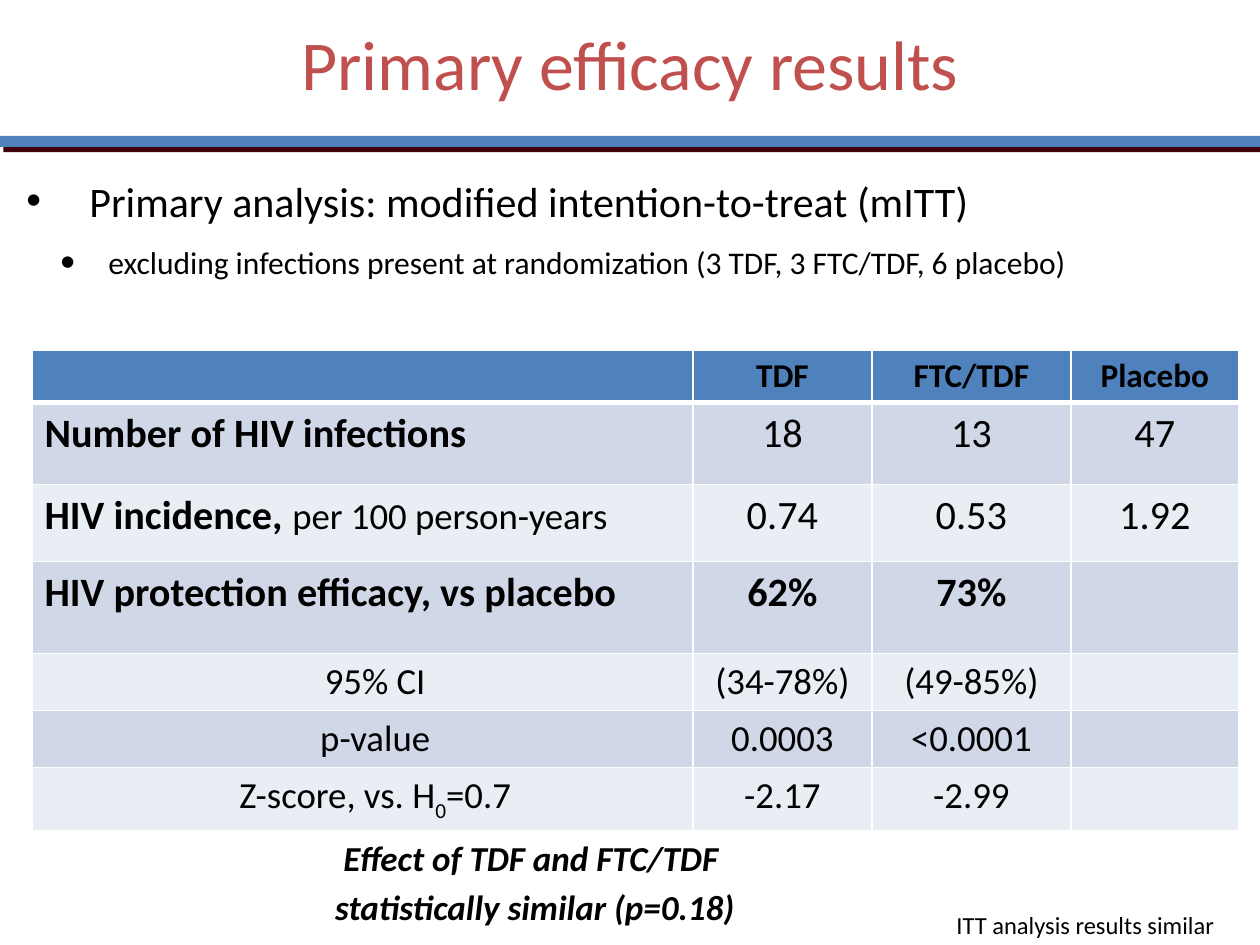
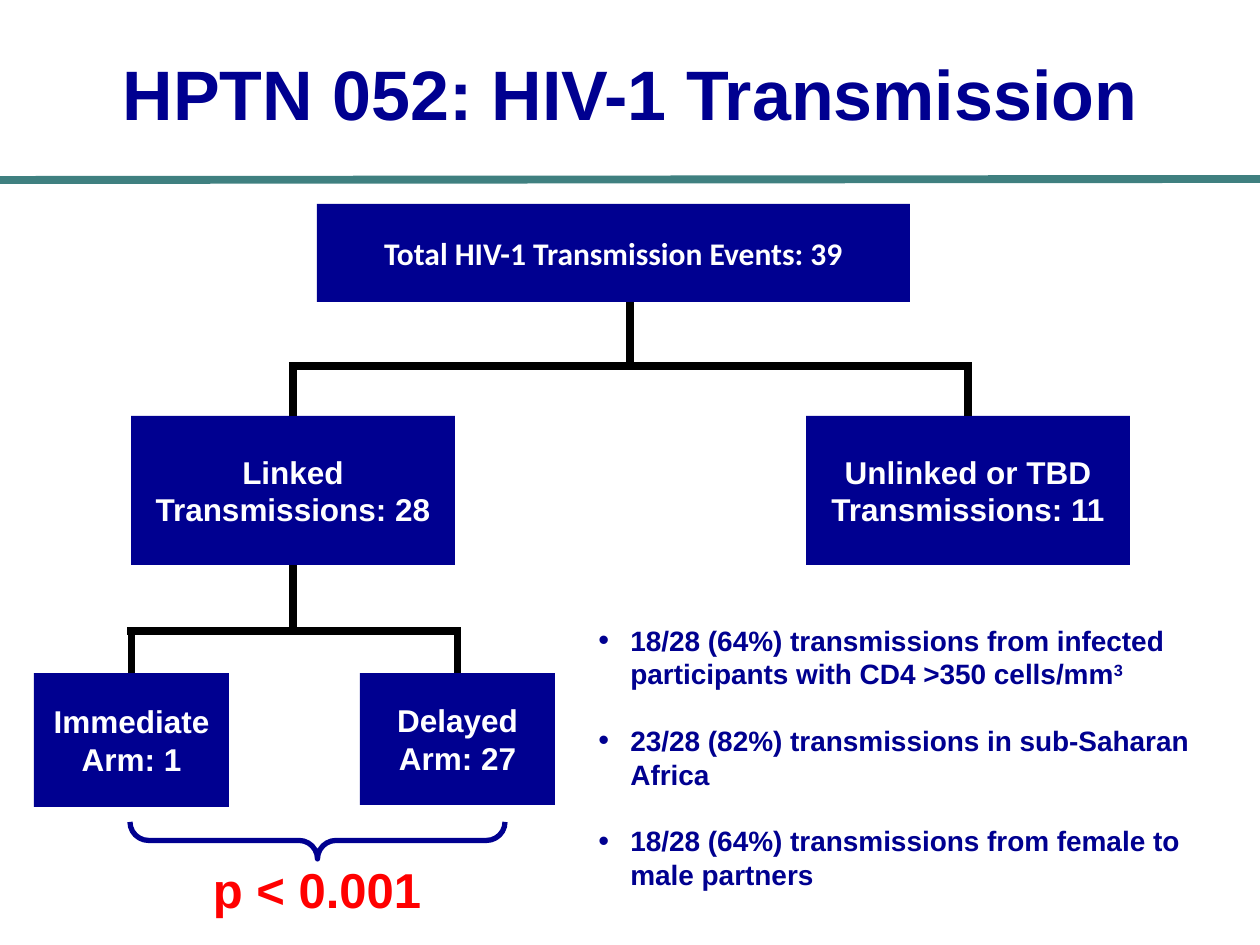
from lxml.etree import SubElement
from pptx import Presentation
from pptx.dml.color import RGBColor
from pptx.enum.shapes import MSO_CONNECTOR, MSO_SHAPE
from pptx.enum.text import MSO_ANCHOR, PP_ALIGN
from pptx.oxml.ns import qn
from pptx.util import Emu, Pt

EMU_PER_PX = 914400 / 126
BLACK, WHITE, RED = "000000", "FFFFFF", "FF0000"
BLUE, BRICK, NAVY, TEAL = "4F81BD", "C0504D", "000090", "3F8080"
BAND_SHADOW = "3F000B"
ROW_FILLS = ("D0D8E8", "E9EDF4")
TITLE_SIZE = 40

COLUMN_WIDTHS = (661, 179, 199, 168)
ROW_HEIGHTS = (52, 82, 77, 92, 57, 57, 60)
BOLD = {"bold": True}
SMALL = {"size": 21}
RESULTS = [
    ([("", {})], ("TDF", "FTC/TDF", "Placebo"), {"size": 19, "bold": True}),
    ([("Number of HIV infections", BOLD)], ("18", "13", "47"), {}),
    ([("HIV incidence, ", BOLD), ("per 100 person-years", SMALL)],
     ("0.74", "0.53", "1.92"), {}),
    ([("HIV protection efficacy, vs placebo", BOLD)], ("62%", "73%", ""), BOLD),
    ([("95% CI", SMALL)], ("(34-78%)", "(49-85%)", ""), SMALL),
    ([("p-value", SMALL)], ("0.0003", "<0.0001", ""), SMALL),
    ([("Z-score, vs. H", SMALL), ("0", {"size": 21, "baseline": -25}), ("=0.7", SMALL)],
     ("-2.17", "-2.99", ""), SMALL),
]
FIRST_STATISTIC_ROW = 4


def px(length):
    """Turn px into EMU."""
    return Emu(round(length * EMU_PER_PX))


def rgb(color):
    """Turn a hex string into a colour."""
    return RGBColor.from_string(color)


def format_run(run, size=23, font="Calibri", color=BLACK, bold=False, italic=False,
               baseline=0):
    """Set the look of one run."""
    run.font.size = Pt(size)
    run.font.name = font
    run.font.color.rgb = rgb(color)
    run.font.bold = bold
    run.font.italic = italic
    if baseline:
        run._r.get_or_add_rPr().set("baseline", str(baseline * 1000))


def write(paragraph, pieces, align=PP_ALIGN.LEFT, **style):
    """Fill a paragraph with (text, style) pieces over a common style."""
    paragraph.alignment = align
    for text, changes in pieces:
        run = paragraph.add_run()
        run.text = text
        format_run(run, **{**style, **changes})


def fill_frame(frame, paragraphs, gap=0, anchor=MSO_ANCHOR.MIDDLE, **style):
    """Write paragraphs, each a list of pieces, into a text frame."""
    frame.word_wrap = True
    frame.vertical_anchor = anchor
    for index, pieces in enumerate(paragraphs):
        paragraph = frame.add_paragraph() if index else frame.paragraphs[0]
        paragraph.space_after = Pt(gap if index < len(paragraphs) - 1 else 0)
        write(paragraph, pieces, **style)


def add_text(slide, bounds, paragraphs, **options):
    """Add a wrapping text box and return its paragraphs."""
    frame = slide.shapes.add_textbox(*map(px, bounds)).text_frame
    fill_frame(frame, paragraphs, **options)
    return frame.paragraphs


def add_title(slide, bounds, text, **style):
    """Add the centred slide title."""
    add_text(slide, bounds, [[(text, {})]], align=PP_ALIGN.CENTER, size=TITLE_SIZE, **style)


def set_bullet(paragraph, margin, hanging, percent=100):
    """Give a paragraph a hanging round bullet."""
    properties = paragraph._p.get_or_add_pPr()
    properties.set("marL", str(px(margin)))
    properties.set("indent", str(-px(hanging)))
    SubElement(properties, qn("a:buSzPct"), val=str(percent * 1000))
    SubElement(properties, qn("a:buFont"), typeface="Arial")
    SubElement(properties, qn("a:buChar"), char="•")


def add_rectangle(slide, bounds, color):
    """Add a plain filled rectangle."""
    shape = slide.shapes.add_shape(MSO_SHAPE.RECTANGLE, *map(px, bounds))
    shape.shadow.inherit = False
    shape.fill.solid()
    shape.fill.fore_color.rgb = rgb(color)
    shape.line.fill.background()
    return shape


def add_box(slide, bounds, text, font="Arial"):
    """Add a navy box with a bold white label."""
    shape = add_rectangle(slide, bounds, NAVY)
    fill_frame(shape.text_frame, [[(text, {})]], align=PP_ALIGN.CENTER,
               size=18, font=font, color=WHITE, bold=True)
    return shape


def add_band(slide):
    """Add the title band with its hard offset shadow."""
    band = add_rectangle(slide, (0, 136, 1260, 11), BLUE)
    effects = band._element.spPr.find(qn("a:effectLst"))
    shadow = SubElement(effects, qn("a:outerShdw"), dist=str(Pt(3.6)),
                        dir=str(56 * 60000), algn="ctr", rotWithShape="0")
    SubElement(shadow, qn("a:srgbClr"), val=BAND_SHADOW)


def add_line(slide, start, end, color=BLACK):
    """Add a thick straight connector between two points in EMU."""
    line = slide.shapes.add_connector(MSO_CONNECTOR.STRAIGHT, *start, *end)
    line.line.color.rgb = rgb(color)
    line.line.width = Pt(4.5)
    SubElement(line._element.spPr, qn("a:effectLst"))
    return line


def middle(shape):
    """Return the horizontal middle of a shape."""
    return Emu(shape.left + shape.width // 2)


def add_branches(slide, stem_x, stem_top, bar_y, children):
    """Join a stem through a bar to the top of each child box; return the stem."""
    stem = add_line(slide, (stem_x, stem_top), (stem_x, bar_y))
    overhang = px(4)
    add_line(slide, (middle(children[0]) - overhang, bar_y),
             (middle(children[-1]) + overhang, bar_y))
    for child in children:
        drop = add_line(slide, (middle(child), bar_y), (middle(child), child.top))
        drop.end_connect(child, 0)
    return stem


def style_cell(cell, color, bottom_width):
    """Set a cell's white borders and its fill."""
    properties = cell._tc.get_or_add_tcPr()
    for side, width in (("L", 1), ("R", 1), ("T", 1), ("B", bottom_width)):
        border = SubElement(properties, qn(f"a:ln{side}"), w=str(Pt(width)))
        fill = SubElement(border, qn("a:solidFill"))
        SubElement(fill, qn("a:srgbClr"), val=WHITE)
    cell.fill.solid()
    cell.fill.fore_color.rgb = rgb(color)


def add_results_table(slide):
    """Add the table of efficacy results."""
    frame = slide.shapes.add_table(len(RESULTS), len(COLUMN_WIDTHS), px(32), px(350),
                                   px(sum(COLUMN_WIDTHS)), px(sum(ROW_HEIGHTS)))
    table = frame.table
    for column, width in zip(table.columns, COLUMN_WIDTHS):
        column.width = px(width)
    for row, height in zip(table.rows, ROW_HEIGHTS):
        row.height = px(height)
    for row_index, (label, values, style) in enumerate(RESULTS):
        is_header = row_index == 0
        is_statistic = row_index >= FIRST_STATISTIC_ROW
        color = BLUE if is_header else ROW_FILLS[(row_index - 1) % 2]
        contents = [label] + [[(value, style)] for value in values]
        for column_index, pieces in enumerate(contents):
            cell = table.cell(row_index, column_index)
            style_cell(cell, color, 3 if is_header else 1)
            centred = column_index > 0 or is_statistic
            write(cell.text_frame.paragraphs[0], pieces,
                  align=PP_ALIGN.CENTER if centred else PP_ALIGN.LEFT)
            if is_statistic and column_index == 0:
                cell.margin_left = px(38)


def build_efficacy_slide(slide):
    """Build the primary efficacy results."""
    add_title(slide, (63, 0, 1134, 126), "Primary efficacy results", color=BRICK)
    add_band(slide)
    analysis, exclusion = add_text(
        slide, (14, 169, 1228, 150),
        [[("Primary analysis: modified intention-to-treat (mITT)", {"size": 24})],
         [("excluding infections present at randomization (3 TDF, 3 FTC/TDF, 6 placebo)",
           {"size": 18})]],
        gap=10, anchor=MSO_ANCHOR.TOP)
    set_bullet(analysis, 63, 63)
    set_bullet(exclusion, 82, 48, 133)
    add_results_table(slide)
    add_text(slide, (944, 904, 300, 42), [[("ITT analysis results similar", {})]], size=14)
    add_text(slide, (94, 829, 882, 106),
             [[("Effect of TDF and FTC/TDF ", {})], [("statistically similar (p=0.18)", {})]],
             gap=4, align=PP_ALIGN.CENTER, size=20, bold=True, italic=True)


def build_transmission_slide(slide):
    """Build the tree of transmission events."""
    add_line(slide, (px(0), px(180)), (px(1260), px(179)), TEAL)
    add_title(slide, (0, 4, 1260, 178), "HPTN 052: HIV-1 Transmission",
              font="Arial", color=NAVY, bold=True)
    total = add_box(slide, (317, 204, 593, 98), "Total HIV-1 Transmission Events: 39", "Calibri")
    linked = add_box(slide, (131, 416, 324, 149), "Linked Transmissions: 28")
    unlinked = add_box(slide, (806, 416, 324, 149), "Unlinked or TBD Transmissions: 11")
    immediate = add_box(slide, (34, 673, 195, 134), "Immediate Arm: 1")
    delayed = add_box(slide, (360, 673, 195, 132), "Delayed Arm: 27")
    add_branches(slide, px(630), total.top + total.height, px(366), [linked, unlinked])
    stem = add_branches(slide, middle(linked), linked.top + linked.height, px(631),
                        [immediate, delayed])
    stem.begin_connect(linked, 2)

    brace = slide.shapes.add_shape(MSO_SHAPE.RIGHT_BRACE, *map(px, (299, 653, 37, 375)))
    brace.rotation = 90
    brace.adjustments[0] = 0.5
    brace.shadow.inherit = False
    brace.fill.background()
    brace.line.color.rgb = rgb(NAVY)
    brace.line.width = Pt(3)
    add_text(slide, (63, 859, 508, 59), [[("p < 0.001", {})]], align=PP_ALIGN.CENTER,
             size=28, font="Arial", color=RED, bold=True)

    findings = add_text(
        slide, (586, 617, 649, 282),
        [[("18/28 (64%) transmissions from infected participants with CD4 >350 cells/mm", {}),
          ("3", {"baseline": 30})],
         [("23/28 (82%) transmissions in sub-Saharan Africa", {})],
         [("18/28 (64%) transmissions from female to male partners", {})]],
        gap=19, anchor=MSO_ANCHOR.TOP, size=16, font="Arial", color=NAVY, bold=True)
    for finding in findings:
        set_bullet(finding, 32, 32, 110)


def main():
    """Build both slides and save them."""
    presentation = Presentation()
    presentation.slide_width, presentation.slide_height = px(1260), px(945)
    blank = presentation.slide_layouts[6]
    for build in (build_efficacy_slide, build_transmission_slide):
        build(presentation.slides.add_slide(blank))
    presentation.save("out.pptx")


if __name__ == "__main__":
    main()
